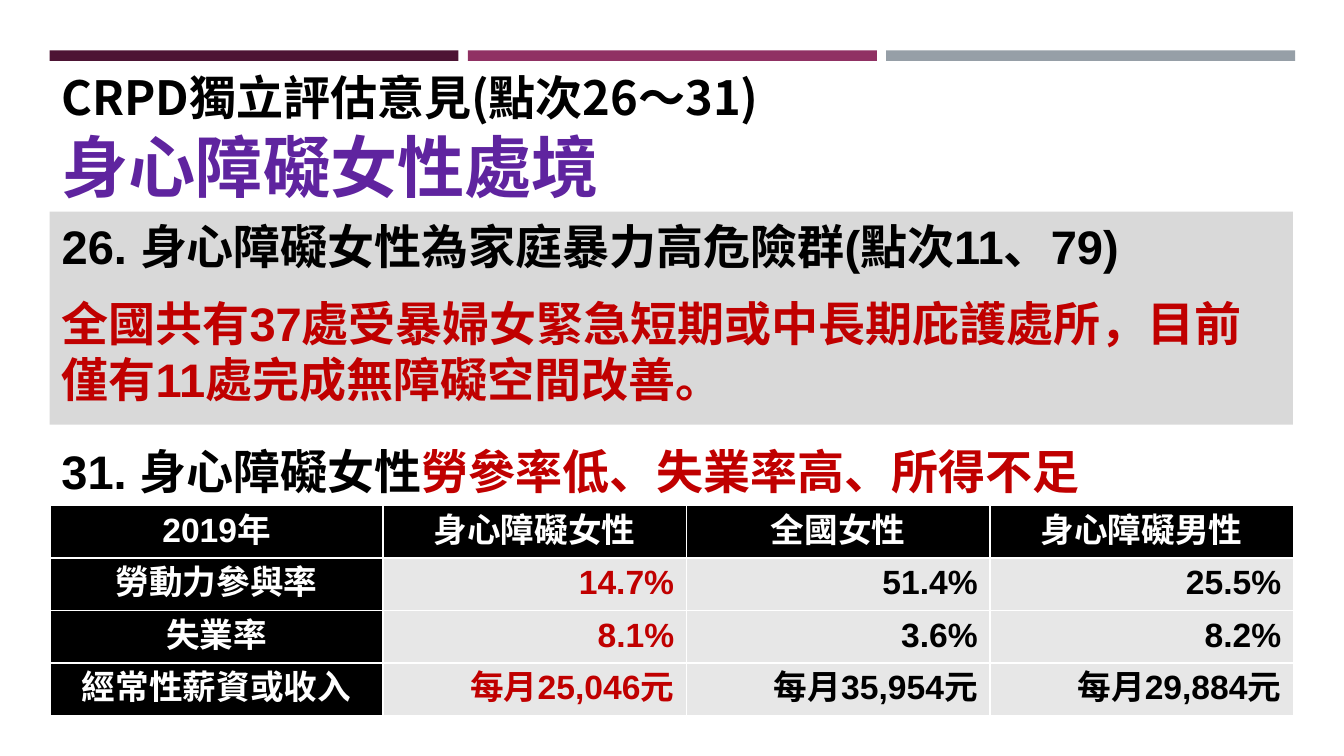
from pptx import Presentation
from pptx.dml.color import RGBColor
from pptx.enum.shapes import MSO_SHAPE as SHAPE
from pptx.enum.text import MSO_ANCHOR as ANCHOR, PP_ALIGN as ALIGN
from pptx.oxml.ns import qn
from pptx.util import Pt
from lxml.etree import SubElement

BLACK = RGBColor(0x00, 0x00, 0x00)
WHITE = RGBColor(0xFF, 0xFF, 0xFF)
RED = RGBColor(0xC0, 0x00, 0x00)
PURPLE = RGBColor(0x5F, 0x24, 0x9F)
PLUM = RGBColor(0x4D, 0x14, 0x34)
BERRY = RGBColor(0x90, 0x31, 0x63)
SLATE = RGBColor(0x96, 0x9F, 0xA7)
PANEL = RGBColor(0xD9, 0xD9, 0xD9)
CELL = RGBColor(0xE7, 0xE7, 0xE7)

LEFT, WIDTH = 29.5, 740


def add_text(p, text, size=28, color=BLACK, font="Arial", align=ALIGN.LEFT):
    p.alignment = align
    r = p.add_run()
    r.text = text
    r.font.size = Pt(size)
    r.font.bold = True
    r.font.color.rgb = color
    r.font.name = font
    SubElement(r._r.get_or_add_rPr(), qn("a:ea")).set("typeface", font)


def place(sp, top, height):
    sp.left, sp.top = Pt(LEFT), Pt(top)
    sp.width, sp.height = Pt(WIDTH), Pt(height)


prs = Presentation()
prs.slide_width, prs.slide_height = Pt(800), Pt(450)
s = prs.slides.add_slide(prs.slide_layouts[1])

for i, color in enumerate([PLUM, BERRY, SLATE]):
    bar = s.shapes.add_shape(SHAPE.RECTANGLE, Pt(LEFT + i * 249), Pt(30), Pt(243.4), Pt(6.3))
    bar.shadow.inherit = False
    bar.fill.solid()
    bar.fill.fore_color.rgb = color
    bar.line.fill.background()

title = s.shapes.title
place(title, 36.7, 90)
tf = title.text_frame
tf.vertical_anchor = ANCHOR.MIDDLE
add_text(tf.paragraphs[0], "CRPD獨立評估意見(點次26～31)", font="Noto Sans CJK SC")
add_text(tf.add_paragraph(), "身心障礙女性處境", size=40, color=PURPLE)

body = s.placeholders[1]
place(body, 126, 126.7)
body.fill.solid()
body.fill.fore_color.rgb = PANEL
tf = body.text_frame
points = [
    ("26. 身心障礙女性為家庭暴力高危險群(點次11、79)", BLACK),
    ("全國共有37處受暴婦女緊急短期或中長期庇護處所，目前僅有11處完成無障礙空間改善。", RED),
]
for i, (text, color) in enumerate(points):
    p = tf.add_paragraph() if i else tf.paragraphs[0]
    p.space_before = p.space_after = Pt(6)
    add_text(p, text, color=color)
    pPr = p._p.get_or_add_pPr()
    pPr.set("marL", "0")
    pPr.set("indent", "0")
    SubElement(pPr, qn("a:buNone"))

heading = s.shapes.add_textbox(Pt(LEFT), Pt(260), Pt(WIDTH), Pt(41))
heading.text_frame.word_wrap = True
p = heading.text_frame.paragraphs[0]
add_text(p, "31. 身心障礙女性")
add_text(p, "勞參率低、失業率高、所得不足", color=RED)

rows = [
    ["2019年", "身心障礙女性", "全國女性", "身心障礙男性"],
    ["勞動力參與率", "14.7%", "51.4%", "25.5%"],
    ["失業率", "8.1%", "3.6%", "8.2%"],
    ["經常性薪資或收入", "每月25,046元", "每月35,954元", "每月29,884元"],
]
table = s.shapes.add_table(4, 4, Pt(LEFT + 0.5), Pt(301), Pt(WIDTH), Pt(124)).table
for col, width in zip(table.columns, [197.9, 180.7, 180.7, 180.7]):
    col.width = Pt(width)
for i, row in enumerate(rows):
    for j, text in enumerate(row):
        cell = table.cell(i, j)
        label = i == 0 or j == 0
        cell.fill.solid()
        cell.fill.fore_color.rgb = BLACK if label else CELL
        color = WHITE if label else RED if j == 1 else BLACK
        add_text(cell.text_frame.paragraphs[0], text, size=20, color=color,
                 align=ALIGN.CENTER if label else ALIGN.RIGHT)

prs.save("out.pptx")
